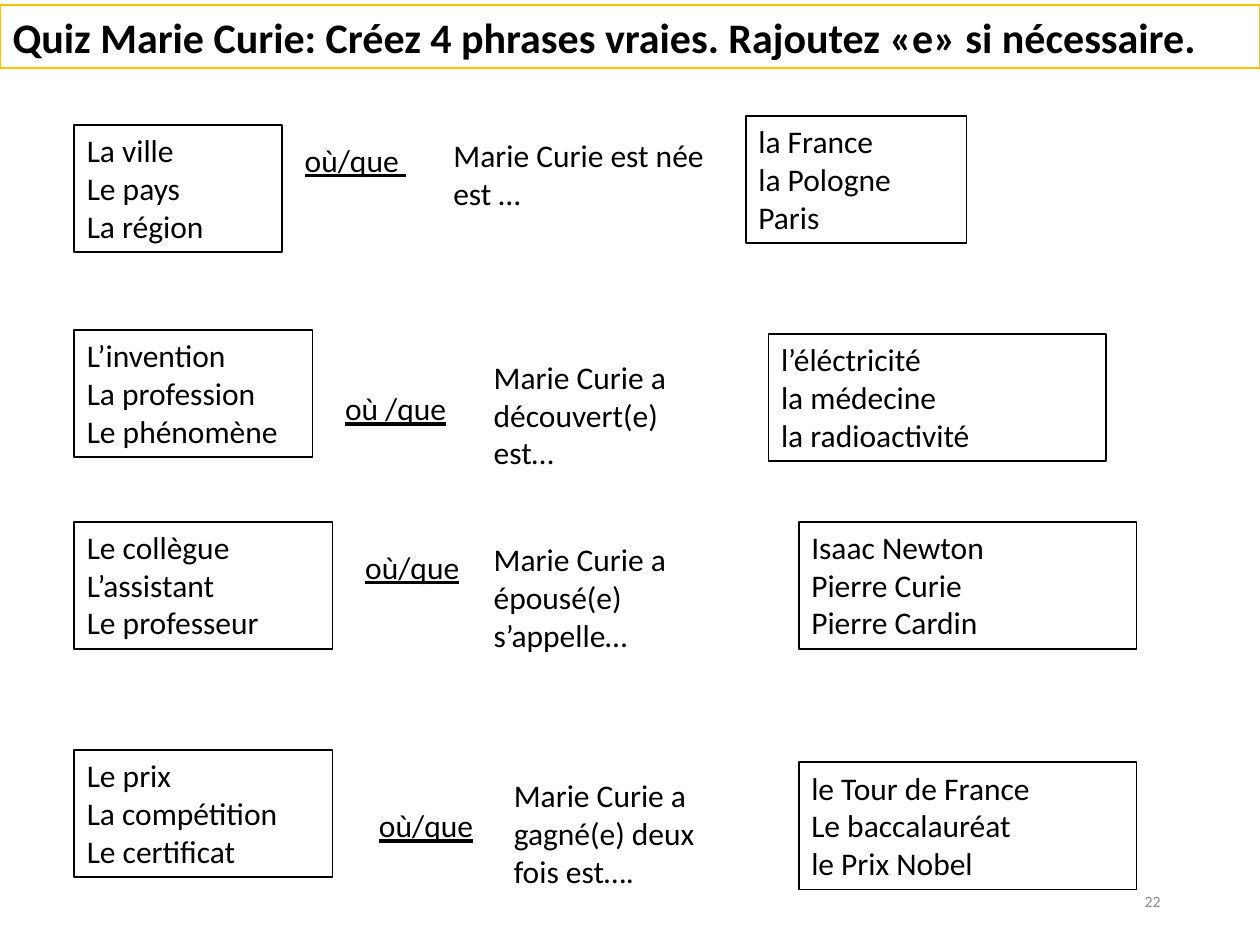
from dataclasses import dataclass

from pptx import Presentation
from pptx.dml.color import RGBColor
from pptx.enum.shapes import MSO_SHAPE as Shape
from pptx.enum.text import MSO_ANCHOR as Anchor, MSO_AUTO_SIZE as AutoSize, PP_ALIGN as Align
from pptx.util import Inches, Pt


@dataclass(frozen=True)
class Theme:
    """Colours, font and type sizes of the slide."""
    font: str = "Calibri"
    ink: RGBColor = RGBColor(0, 0, 0)
    paper: RGBColor = RGBColor(255, 255, 255)
    accent: RGBColor = RGBColor(0xFF, 0xC0, 0x00)
    muted: RGBColor = RGBColor(0x8C, 0x8C, 0x8C)
    title: int = 24
    body: int = 18
    small: int = 9


THEME = Theme()
TITLE = "Quiz Marie Curie: Créez 4 phrases vraies. Rajoutez «e» si nécessaire."
CHOICE_HEIGHT = 1.01
PRONOUN_HEIGHT = 0.4
SUBJECT_LEFT = 0.59

QUESTIONS = [
    {
        "subjects": (["La ville", "Le pays", "La région"], 0.99, 1.65),
        "pronoun": ("où/que ", 2.32, 1.07, 1.18),
        "clause": ("Marie Curie est née est …", 3.5, 1.03, 2.44, 0.71),
        "answers": (["la France", "la Pologne", "Paris"], 5.92, 0.92, 1.75),
    },
    {
        "subjects": (["L’invention", "La profession", "Le phénomène"], 2.62, 1.89),
        "pronoun": ("où /que", 2.64, 3.04, 1.1),
        "clause": ("Marie Curie a découvert(e) est…", 3.82, 2.79, 1.81, 1.01),
        "answers": (["l’éléctricité", "la médecine", "la radioactivité"], 6.1, 2.65, 2.68),
    },
    {
        "subjects": (["Le collègue", "L’assistant", "Le professeur"], 4.14, 2.05),
        "pronoun": ("où/que", 2.8, 4.3, 1.02),
        "clause": ("Marie Curie a épousé(e) s’appelle…", 3.82, 4.24, 2.13, 1.01),
        "answers": (["Isaac Newton", "Pierre Curie", "Pierre Cardin"], 6.34, 4.14, 2.68),
    },
    {
        "subjects": (["Le prix", "La compétition", "Le certificat"], 5.95, 2.05),
        "pronoun": ("où/que", 2.91, 6.35, 1.06),
        "clause": ("Marie Curie a gagné(e) deux fois est….", 3.98, 6.11, 1.97, 1.01),
        "answers": (["le Tour de France", "Le baccalauréat", "le Prix Nobel"], 6.34, 6.05, 2.68),
    },
]


def write(box, lines, size=THEME.body, color=THEME.ink, bold=False,
          underline=False, align=Align.LEFT, anchor=Anchor.TOP):
    """Fill a box with one paragraph per line in the given format."""
    frame = box.text_frame
    frame.word_wrap = True
    frame.auto_size = AutoSize.NONE
    frame.vertical_anchor = anchor
    for index, line in enumerate(lines):
        para = frame.add_paragraph() if index else frame.paragraphs[0]
        para.alignment = align
        span = para.add_run()
        span.text = line
        span.font.name = THEME.font
        span.font.size = Pt(size)
        span.font.bold = bold
        span.font.underline = underline
        span.font.color.rgb = color


def outline(box, color):
    """Give a box a paper fill and a thin line."""
    box.fill.solid()
    box.fill.fore_color.rgb = THEME.paper
    box.line.color.rgb = color
    box.line.width = Pt(1)


def add_title(page, text):
    """Place the title in a full-width outlined bar."""
    box = page.shapes.title
    box.left, box.top, box.width, box.height = map(Inches, (0, 0.04, 10, 0.5))
    outline(box, THEME.accent)
    write(box, [text], size=THEME.title, bold=True)


def add_choices(page, lines, left, top, width):
    """Add an outlined box that lists the possible choices."""
    box = page.shapes.add_shape(
        Shape.RECTANGLE, *map(Inches, (left, top, width, CHOICE_HEIGHT)))
    box.shadow.inherit = False
    outline(box, THEME.ink)
    write(box, lines)


def add_text(page, text, left, top, width, height, **style):
    """Add a plain text box."""
    box = page.shapes.add_textbox(*map(Inches, (left, top, width, height)))
    write(box, [text], **style)


def add_question(page, subjects, pronoun, clause, answers):
    """Add one row of sentence parts."""
    lines, top, width = subjects
    add_choices(page, lines, SUBJECT_LEFT, top, width)
    add_text(page, *pronoun, PRONOUN_HEIGHT, underline=True)
    add_text(page, *clause)
    add_choices(page, *answers)


def main():
    """Build the quiz slide and save the deck."""
    deck = Presentation()
    deck.slide_width, deck.slide_height = Inches(10), Inches(7.5)
    page = deck.slides.add_slide(deck.slide_layouts[5])
    add_title(page, TITLE)
    for question in QUESTIONS:
        add_question(page, **question)
    add_text(page, "22", 7.06, 6.95, 2.25, 0.4, size=THEME.small,
             color=THEME.muted, align=Align.RIGHT, anchor=Anchor.MIDDLE)
    deck.save("out.pptx")


if __name__ == "__main__":
    main()
